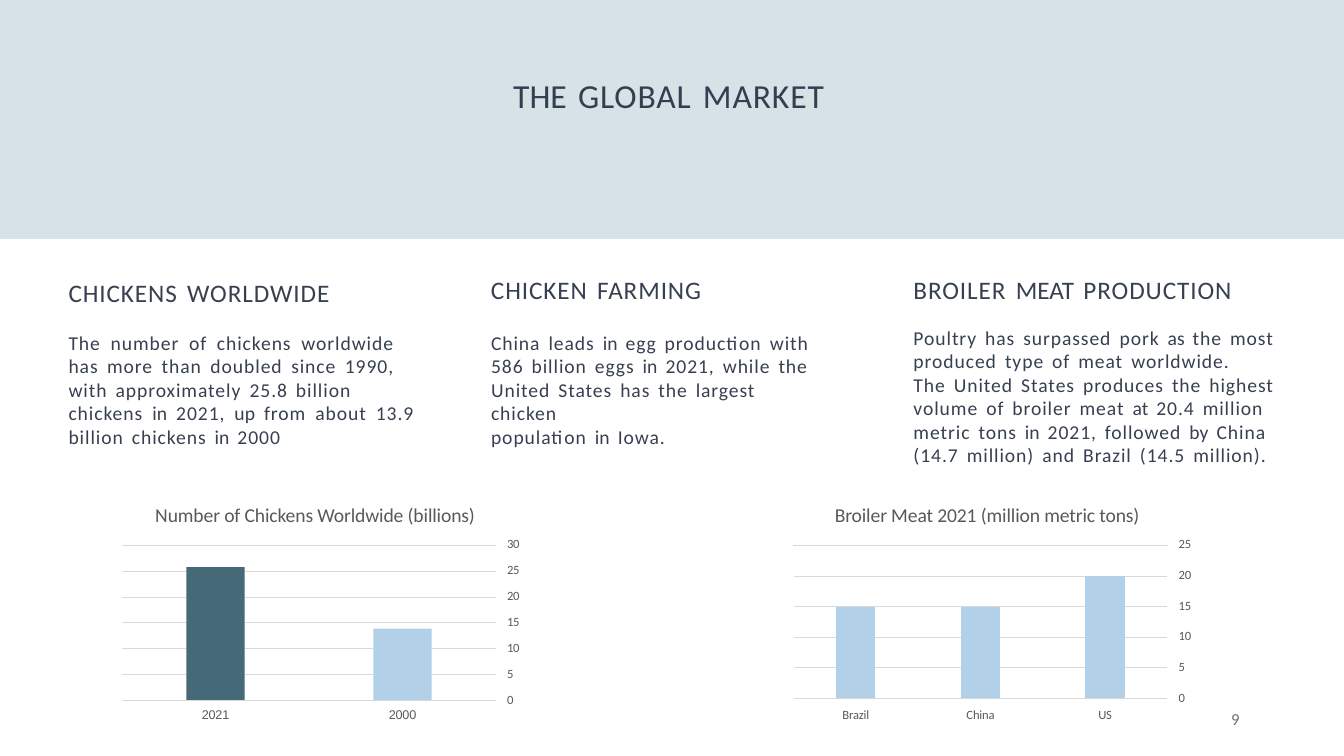
import lxml.etree
import pptx
import pptx.dml.color
import pptx.enum.shapes
import pptx.enum.text
import pptx.oxml.ns
import pptx.util
from pptx.util import Inches, Pt

THEME = {
    "font": "Calibri", "year_font": "Arial",
    "band": "D7E2E7", "title": "323F50", "text": "374051", "page": "767070",
    "chart": "595959", "grid": "D9D9D9", "dark": "466977", "light": "B3D0E9",
    "title_size": 24, "heading_size": 18, "body_size": 14,
    "chart_title_size": 14, "page_size": 12, "label_size": 9,
    "tracking": 0.65, "word_gap": 2.5, "grid_width": 0.75,
}
ALIGN = pptx.enum.text.PP_ALIGN
NO_STYLE = "{2D5ABB26-0587-4C30-8999-92F81FD0307C}"

TITLE = "THE GLOBAL MARKET"
PAGE_NUMBER = "9"
# Words set without letter spacing
TIGHT_WORDS = {"in", "up", "as", "at", "by", "THE", "MEAT"}

# Paragraphs are (text, right margin); tops and sizes are in inches
COLUMNS = [
    {"heading": "CHICKENS WORLDWIDE", "heading_top": 2.74, "body_top": 3.27,
     "width": 3.43, "height": 1.2, "align": ALIGN.JUSTIFY, "body": [
         ("The number of chickens worldwide has more than doubled since 1990, "
          "with approximately 25.8 billion", 0.2),
         ("chickens in 2021, up from about 13.9 billion chickens in 2000", 0)]},
    {"heading": "CHICKEN FARMING", "heading_top": 2.71, "body_top": 3.27,
     "width": 3.41, "height": 0.96, "align": ALIGN.LEFT, "body": [
         ("China leads in egg production with 586 billion eggs in 2021, "
          "while the", 0.16),
         ("United States has the largest chicken", 0.16),
         ("population in Iowa.", 0.16)]},
    {"heading": "BROILER MEAT PRODUCTION", "heading_top": 2.71,
     "body_top": 3.22, "width": 3.65, "height": 1.43, "align": ALIGN.LEFT,
     "body": [
         ("Poultry has surpassed pork as the most produced type of meat "
          "worldwide.", 0),
         ("The United States produces the highest volume of broiler meat at "
          "20.4 million metric tons in 2021, followed by China (14.7 million) "
          "and Brazil (14.5 million).", 0)]},
]
COLUMN_LEFT, COLUMN_STEP = 0.68, 4.19

CHICKENS = {
    "title": "Number of Chickens Worldwide (billions)", "title_left": 1.54,
    "bars": [("2021", 25.8, "dark"), ("2000", 13.9, "light")],
    "maximum": 30, "left": 1.21, "bottom": 6.95, "bar_width": 0.58,
    "category_font": THEME["year_font"],
}
BROILERS = {
    "title": "Broiler Meat 2021 (million metric tons)", "title_left": 8.28,
    "bars": [("Brazil", 15, "light"), ("China", 15, "light"),
             ("US", 20, "light")],
    "maximum": 25, "left": 7.87, "bottom": 6.93, "bar_width": 0.39,
    "category_font": THEME["font"],
}
PLOT_TOP, PLOT_WIDTH, TICK = 5.41, 3.71, 5


def color(name):
    return pptx.dml.color.RGBColor.from_string(THEME[name])


def paint(shape, name):
    shape.shadow.inherit = False
    shape.fill.solid()
    shape.fill.fore_color.rgb = color(name)
    shape.line.fill.background()


def rule_line(line):
    line.color.rgb = color("grid")
    line.width = Pt(THEME["grid_width"])


def add_text(page, left, top, width, height, paragraphs, size, color_name,
             align=ALIGN.LEFT, tracking=THEME["tracking"],
             gap=THEME["word_gap"], face=THEME["font"]):
    box = page.shapes.add_textbox(*map(Inches, (left, top, width, height)))
    frame = box.text_frame
    frame.word_wrap = True
    frame.margin_left = frame.margin_right = frame.margin_bottom = 0
    frame.margin_top = Inches(0.01)
    for number, (text, right_margin) in enumerate(paragraphs):
        para = frame.add_paragraph() if number else frame.paragraphs[0]
        para.alignment = align
        para._p.get_or_add_pPr().set("marR", str(Inches(right_margin)))
        pieces = text.replace(" ", "| |").split("|")
        for piece in pieces:
            spacing = gap if piece == " " else tracking
            if piece in TIGHT_WORDS:
                spacing = 0
            span = para.add_run()
            span.text = piece
            span.font.name = face
            span.font.size = Pt(THEME[size])
            span.font.color.rgb = color(color_name)
            span._r.get_or_add_rPr().set("spc", str(round(spacing * 100)))


def height_of(chart, value):
    return (chart["bottom"] - PLOT_TOP) * value / chart["maximum"]


def bar_lefts(chart):
    step = PLOT_WIDTH / len(chart["bars"])
    return [chart["left"] + step * (number + 0.5) - chart["bar_width"] / 2
            for number in range(len(chart["bars"]))]


def add_rule(page, chart, y):
    right = chart["left"] + PLOT_WIDTH
    rule = page.shapes.add_connector(
        pptx.enum.shapes.MSO_CONNECTOR.STRAIGHT,
        *map(Inches, (chart["left"], y, right, y)))
    rule_line(rule.line)
    lxml.etree.SubElement(rule._element.spPr,
                          pptx.oxml.ns.qn("a:effectLst"))


def add_chart_labels(page, chart):
    add_text(page, chart["title_left"], 4.98, 3.3, 0.26, [(chart["title"], 0)],
             "chart_title_size", "chart", tracking=-0.1, gap=-0.1)
    for value in range(0, chart["maximum"] + 1, TICK):
        y = chart["bottom"] - height_of(chart, value)
        add_text(page, chart["left"] + 3.82, y - 0.1, 0.15, 0.18,
                 [(str(value), 0)], "label_size", "chart", tracking=-0.2)
    for (name, _, _), left in zip(chart["bars"], bar_lefts(chart)):
        center = left + chart["bar_width"] / 2
        add_text(page, center - 0.16, 7, 0.32, 0.18, [(name, 0)], "label_size",
                 "chart", ALIGN.CENTER, -0.15, face=chart["category_font"])


def add_chicken_bars(page, chart):
    """Draw gridlines broken at the bars, then the bars and the axis."""
    lefts = bar_lefts(chart)
    segments = []
    for value in range(TICK, chart["maximum"], TICK):
        y = chart["bottom"] - height_of(chart, value)
        start = chart["left"]
        for (_, amount, _), left in zip(chart["bars"], lefts):
            if amount > value:
                segments.append((start, left, y))
                start = left + chart["bar_width"]
        segments.append((start, chart["left"] + PLOT_WIDTH, y))
    builder = page.shapes.build_freeform(Inches(segments[0][0]),
                                         Inches(segments[0][2]))
    for start, end, y in segments:
        builder.move_to(Inches(start), Inches(y))
        builder.add_line_segments([(Inches(end), Inches(y))], close=False)
    grid = builder.convert_to_shape()
    grid.shadow.inherit = False
    grid.fill.background()
    rule_line(grid.line)

    for (_, amount, name), left in zip(chart["bars"], lefts):
        tall = height_of(chart, amount)
        bar = page.shapes.add_shape(
            pptx.enum.shapes.MSO_SHAPE.RECTANGLE,
            *map(Inches, (left, chart["bottom"] - tall, chart["bar_width"], tall)))
        paint(bar, name)
    add_rule(page, chart, chart["bottom"])


def set_borders(cell, sides):
    for side in "LRTB":
        line = lxml.etree.SubElement(cell._tc.get_or_add_tcPr(),
                                     pptx.oxml.ns.qn("a:ln" + side))
        if side not in sides:
            lxml.etree.SubElement(line, pptx.oxml.ns.qn("a:noFill"))
            continue
        line.set("w", str(Pt(THEME["grid_width"])))
        fill = lxml.etree.SubElement(line, pptx.oxml.ns.qn("a:solidFill"))
        lxml.etree.SubElement(fill, pptx.oxml.ns.qn("a:srgbClr"),
                              val=THEME["grid"])


def add_broiler_table(page, chart):
    """Build bars as merged filled cells, one row for each tick step."""
    rows = chart["maximum"] // TICK - 1
    columns = 2 * len(chart["bars"]) + 1
    tall = height_of(chart, rows * TICK)
    table = page.shapes.add_table(
        rows, columns, *map(Inches, (chart["left"], chart["bottom"] - tall,
                                     PLOT_WIDTH, tall))).table
    table.first_row = table.horz_banding = False
    style = table._tbl.tblPr.find(pptx.oxml.ns.qn("a:tableStyleId"))
    style.text = NO_STYLE
    gap = PLOT_WIDTH / len(chart["bars"]) - chart["bar_width"]
    for number, column in enumerate(table.columns):
        edge = number in (0, columns - 1)
        column.width = Inches(chart["bar_width"] if number % 2
                              else gap / 2 if edge else gap)
    tops = {2 * number + 1: rows - amount // TICK
            for number, (_, amount, _) in enumerate(chart["bars"])}
    for row in range(rows):
        table.rows[row].height = Inches(tall / rows)
        for column in range(columns):
            cell = table.cell(row, column)
            in_bar = row >= tops.get(column, rows)
            cell.margin_left = cell.margin_right = 0
            cell.margin_top = cell.margin_bottom = 0
            lxml.etree.SubElement(cell.text_frame.paragraphs[0]._p,
                                  pptx.oxml.ns.qn("a:endParaRPr"), sz="900")
            set_borders(cell, "B" if in_bar else "TB")
            if in_bar:
                cell.fill.solid()
                cell.fill.fore_color.rgb = color("light")
            else:
                cell.fill.background()
    for column, top in tops.items():
        table.cell(top, column).merge(table.cell(rows - 1, column))
    table.cell(0, 0).merge(table.cell(0, columns - 3))


def main():
    deck = pptx.Presentation()
    deck.slide_width, deck.slide_height = Inches(13.33), Inches(7.5)
    page = deck.slides.add_slide(deck.slide_layouts[6])
    band = page.shapes.add_shape(pptx.enum.shapes.MSO_SHAPE.RECTANGLE, 0, 0,
                                 deck.slide_width, Inches(2.37))
    paint(band, "band")
    add_text(page, 5.09, 0.73, 5.8, 0.5, [(TITLE, 0)], "title_size", "title")
    for number, column in enumerate(COLUMNS):
        left = COLUMN_LEFT + number * COLUMN_STEP
        add_text(page, left, column["heading_top"], 3.4, 0.33,
                 [(column["heading"], 0)], "heading_size", "text")
        add_text(page, left, column["body_top"], column["width"],
                 column["height"], column["body"], "body_size", "text",
                 column["align"])
    add_chicken_bars(page, CHICKENS)
    add_broiler_table(page, BROILERS)
    for chart in (CHICKENS, BROILERS):
        add_rule(page, chart, PLOT_TOP)
        add_chart_labels(page, chart)
    add_text(page, 12.21, 7.02, 0.11, 0.23, [(PAGE_NUMBER, 0)],
             "page_size", "page", tracking=0)
    deck.save("out.pptx")


if __name__ == "__main__":
    main()
